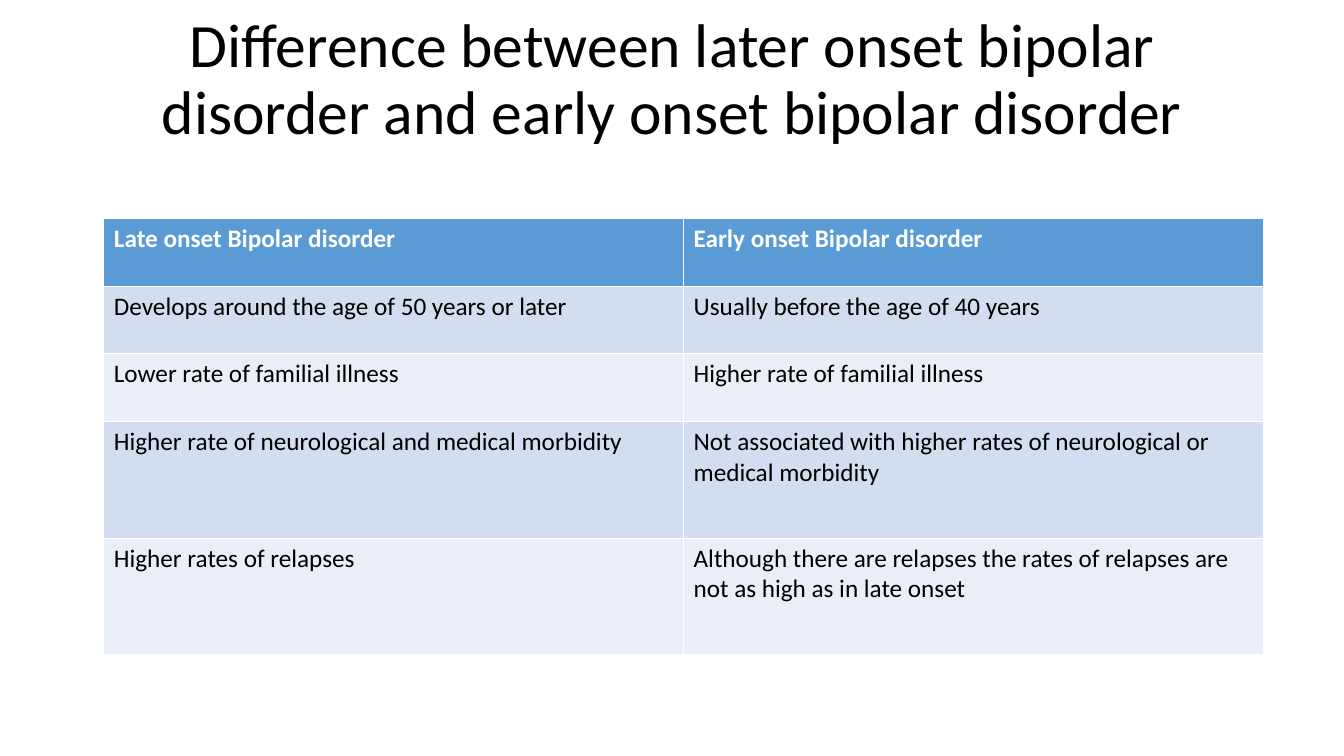
"""Build a slide comparing late and early onset bipolar disorder."""
from pptx import Presentation
from pptx.dml.color import RGBColor
from pptx.enum.text import MSO_ANCHOR, MSO_AUTO_SIZE, PP_ALIGN
from pptx.util import Inches, Pt

TITLE = "Difference between later onset bipolar disorder and early onset bipolar disorder"
ROWS = [
    ("Late onset Bipolar disorder", "Early onset Bipolar disorder"),
    ("Develops around the age of 50 years or later", "Usually before the age of 40 years"),
    ("Lower rate of familial illness", "Higher rate of familial illness"),
    ("Higher rate of neurological and medical morbidity",
     "Not associated with higher rates of neurological or medical morbidity"),
    ("Higher rates of relapses",
     "Although there are relapses the rates of relapses are not as high as in late onset"),
]
HEIGHTS = [0.67, 0.67, 0.67, 1.16, 1.16]
HEAD, BANDS = "5B9BD5", ("EAEFF7", "D2DEEF")
WHITE, BLACK = "FFFFFF", "000000"
WIDTH = 11.5


def color(code):
    return RGBColor.from_string(code)


def style(frame, size, code, bold=False):
    for para in frame.paragraphs:
        for run in para.runs:
            font = run.font
            font.name, font.size, font.bold = "Calibri", Pt(size), bold
            font.color.rgb = color(code)


def add_title(slide):
    title = slide.shapes.title
    title.left, title.top = Inches(0.92), Inches(0)
    title.width, title.height = Inches(WIDTH), Inches(1.61)
    frame = title.text_frame
    frame.text = TITLE
    frame.word_wrap = True
    frame.auto_size = MSO_AUTO_SIZE.NONE
    frame.vertical_anchor = MSO_ANCHOR.MIDDLE
    para = frame.paragraphs[0]
    para.alignment = PP_ALIGN.CENTER
    para.line_spacing = 0.9
    style(frame, 44, BLACK)


def add_grid(slide):
    cols = len(ROWS[0])
    grid = slide.shapes.add_table(
        len(ROWS), cols, Inches(1.03), Inches(2.17),
        Inches(WIDTH), Inches(sum(HEIGHTS))).table
    for col in grid.columns:
        col.width = Inches(WIDTH / cols)
    for i, (texts, height) in enumerate(zip(ROWS, HEIGHTS)):
        grid.rows[i].height = Inches(height)
        head = i == 0
        for j, text in enumerate(texts):
            cell = grid.cell(i, j)
            cell.text_frame.text = text
            cell.fill.solid()
            cell.fill.fore_color.rgb = color(HEAD if head else BANDS[i % 2])
            style(cell.text_frame, 18, WHITE if head else BLACK, head)


def main():
    deck = Presentation()
    deck.slide_width, deck.slide_height = Inches(13.33), Inches(7.5)
    slide = deck.slides.add_slide(deck.slide_layouts[5])
    add_title(slide)
    add_grid(slide)
    deck.save("out.pptx")


if __name__ == "__main__":
    main()
